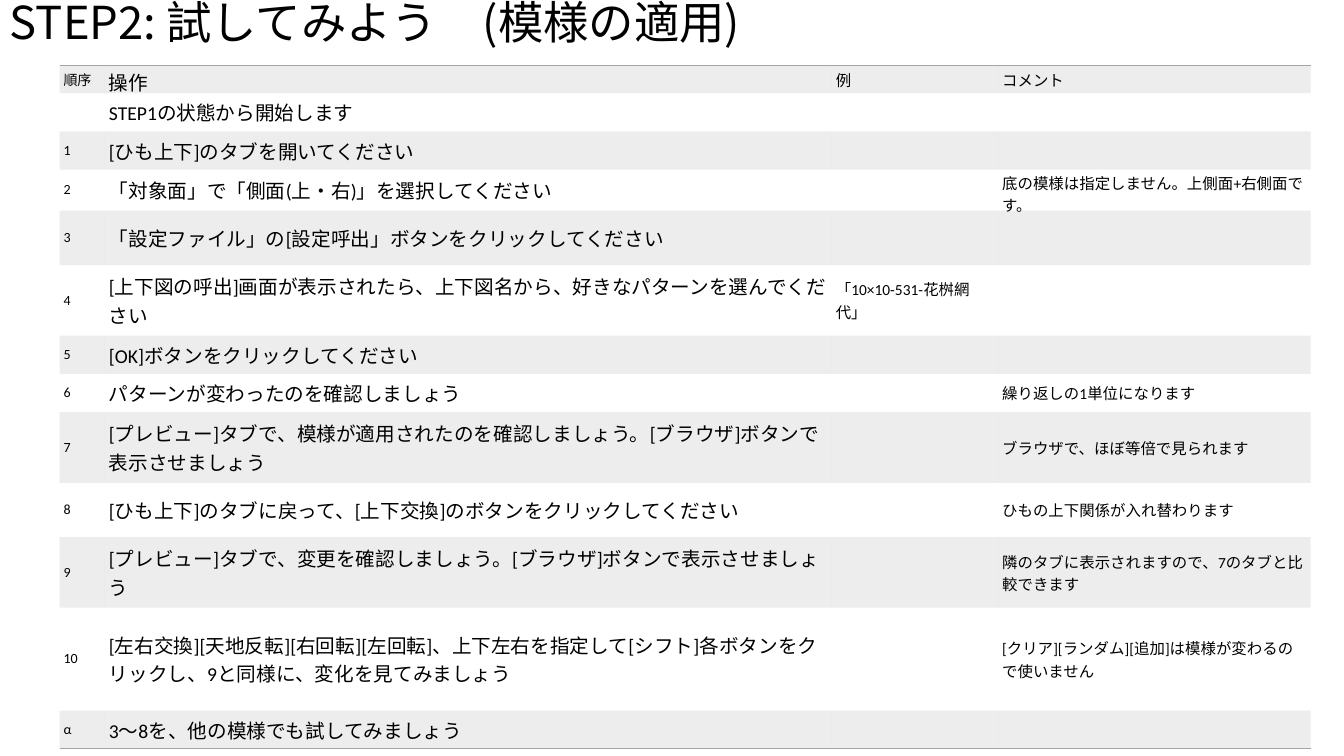
from lxml import etree
from pptx import Presentation, util as u
from pptx.dml.color import RGBColor
from pptx.enum import text
from pptx.oxml.ns import qn

COLORS = {"ink": "000000", "band": "A5A5A5"}
COLUMNS = [0.45, 7.21, 1.65, 3.1]
SIZES = [10, 14, 11, 11]
STEPS = [
    (0.21, "順序", "操作", "例", "コメント"),
    (0.38, "", "STEP1の状態から開始します", "", ""),
    (0.38, "1", "[ひも上下]のタブを開いてください", "", ""),
    (0.38, "2", "「対象面」で「側面(上・右)」を選択してください", "",
     "底の模様は指定しません。上側面+右側面です。"),
    (0.54, "3", "「設定ファイル」の[設定呼出」ボタンをクリックしてください", "", ""),
    (0.7, "4", "[上下図の呼出]画面が表示されたら、上下図名から、好きなパターンを選んでください",
     "「10×10-531-花桝網代」", ""),
    (0.38, "5", "[OK]ボタンをクリックしてください", "", ""),
    (0.38, "6", "パターンが変わったのを確認しましょう", "", "繰り返しの1単位になります"),
    (0.7, "7", "[プレビュー]タブで、模様が適用されたのを確認しましょう。[ブラウザ]ボタンで表示させましょう",
     "", "ブラウザで、ほぼ等倍で見られます"),
    (0.54, "8", "[ひも上下]のタブに戻って、[上下交換]のボタンをクリックしてください", "",
     "ひもの上下関係が入れ替わります"),
    (0.7, "9", "[プレビュー]タブで、変更を確認しましょう。[ブラウザ]ボタンで表示させましょう", "",
     "隣のタブに表示されますので、7のタブと比較できます"),
    (1.02, "10", "[左右交換][天地反転][右回転][左回転]、上下左右を指定して[シフト]各ボタンをクリックし、9と同様に、変化を見てみましょう",
     "", "[クリア][ランダム][追加]は模様が変わるので使いません"),
    (0.38, "α", "3～8を、他の模様でも試してみましょう", "", ""),
]


def set_font(paragraph, name, size):
    paragraph.font.name = name
    paragraph.font.size = u.Pt(size)
    paragraph.font.color.rgb = RGBColor.from_string(COLORS["ink"])


def add_border(cell, side):
    line = etree.SubElement(cell._tc.get_or_add_tcPr(), qn(f"a:{side}"), w=str(u.Pt(1)))
    fill = etree.SubElement(line, qn("a:solidFill"))
    etree.SubElement(fill, qn("a:srgbClr"), val=COLORS["band"])


deck = Presentation()
deck.slide_width, deck.slide_height = u.Inches(13.33), u.Inches(7.5)
slide = deck.slides.add_slide(deck.slide_layouts[6])

heading = slide.shapes.add_textbox(0, 0, u.Inches(11.5), u.Inches(0.5)).text_frame
heading.word_wrap = True
heading.vertical_anchor = text.MSO_ANCHOR.MIDDLE
heading.text = "STEP2: 試してみよう\u3000(模様の適用)".replace("\u3000", "　")
heading.paragraphs[0].line_spacing = 0.9
set_font(heading.paragraphs[0], "Noto Sans CJK JP", 32.4)

frame = slide.shapes.add_table(
    len(STEPS), len(COLUMNS), u.Inches(0.59), u.Inches(0.65),
    u.Inches(sum(COLUMNS)), u.Inches(sum(step[0] for step in STEPS)))
procedure = frame.table
procedure.first_row = procedure.horz_banding = False
procedure._tbl.tblPr.find(qn("a:tableStyleId")).text = "{2D5ABB26-0587-4C30-8999-92F81FD0307C}"
for column, width in zip(procedure.columns, COLUMNS):
    column.width = u.Inches(width)

for row, (height, *entries) in enumerate(STEPS):
    procedure.rows[row].height = u.Inches(height)
    for col, entry in enumerate(entries):
        cell = procedure.cell(row, col)
        cell.text = entry
        cell.vertical_anchor = text.MSO_ANCHOR.MIDDLE
        cell.margin_left = cell.margin_right = u.Inches(0.04)
        cell.margin_top = cell.margin_bottom = u.Inches(0.02)
        set_font(cell.text_frame.paragraphs[0], "Calibri", SIZES[col])
        if row == 0:
            add_border(cell, "lnT")
        if row == len(STEPS) - 1:
            add_border(cell, "lnB")
        if row % 2:
            cell.fill.background()
        else:
            cell.fill.solid()
            cell.fill.fore_color.rgb = RGBColor.from_string(COLORS["band"])
            shade = cell._tc.tcPr.find(qn("a:solidFill")).find(qn("a:srgbClr"))
            etree.SubElement(shade, qn("a:alpha"), val="20000")

deck.save("out.pptx")
